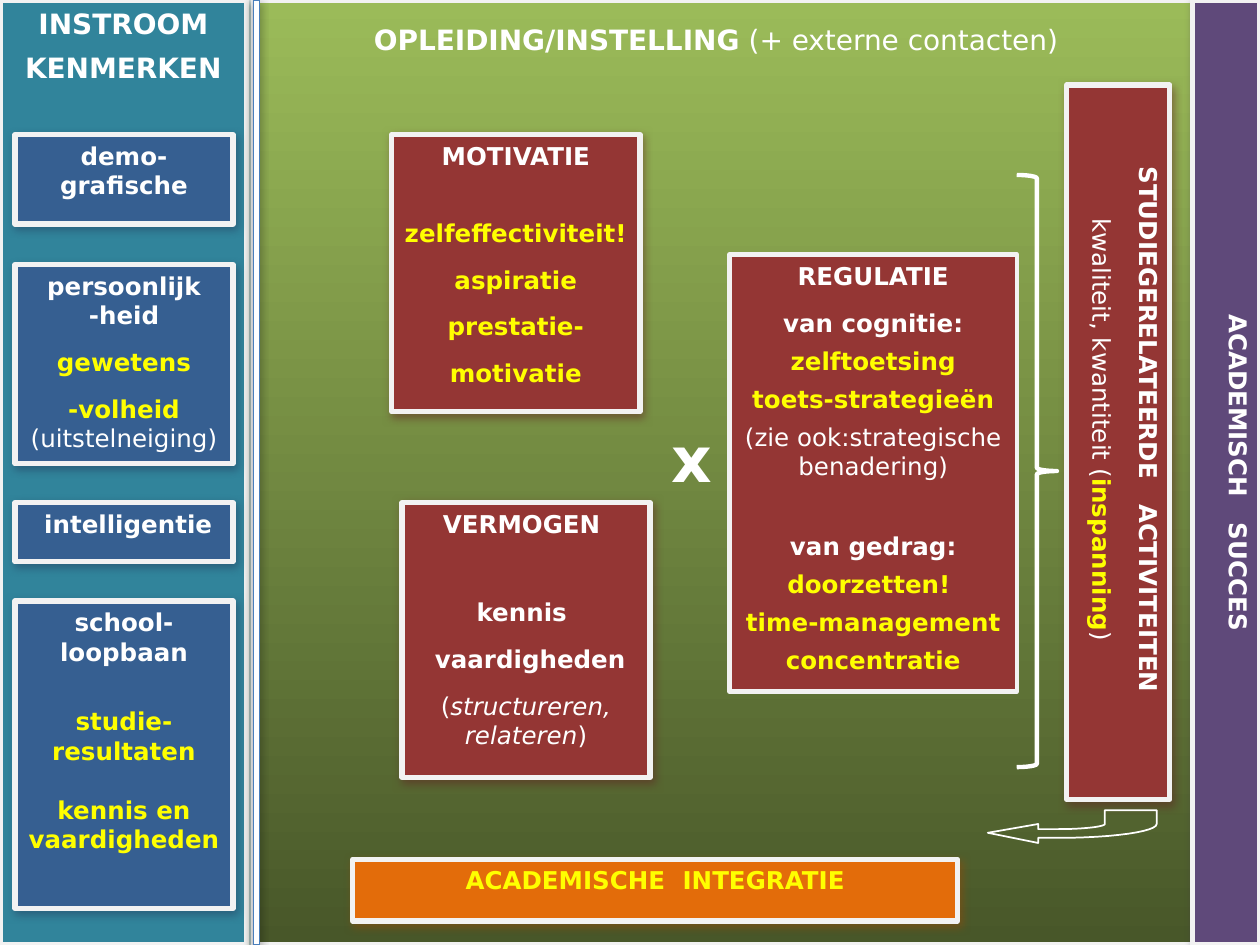
from collections import namedtuple

from lxml.etree import SubElement
from pptx import Presentation
from pptx.dml.color import RGBColor
from pptx.enum.shapes import MSO_SHAPE as Shape
from pptx.enum.text import MSO_ANCHOR as Anchor, PP_ALIGN as Align
from pptx.oxml.ns import qn
from pptx.util import Pt

FONT = "DejaVu Sans"
WHITE, YELLOW, FRAME = "FFFFFF", "FFFF00", "F2F2F2"
BLUE, RED = ("365F91", "243F60"), ("943634", "622423")

Run = namedtuple("Run", "text color bold italic spacing", defaults=(WHITE, True, False, 0))
Para = namedtuple("Para", "runs before right", defaults=(0, 0))


def rgb(hex_color):
    return RGBColor.from_string(hex_color)


def white(text, before=0):
    return Para([Run(text)], before)


def yellow(text, before=0):
    return Para([Run(text, YELLOW)], before)


def light(text, before=0):
    return Para([Run(text, bold=False)], before)


def spread(first, second, spacing, color=WHITE, right=0):
    """Two words with a widened space between them."""
    return Para([Run(first, color), Run(" ", color, spacing=spacing), Run(second, color)], 0, right)


def add_shadow(shape, color, alpha=50, distance=2.2, angle=63):
    effects = shape._element.spPr.find(qn("a:effectLst"))
    shadow = SubElement(effects, qn("a:outerShdw"), blurRad=str(Pt(5)), dist=str(Pt(distance)),
                        dir=str(angle * 60000), algn="ctr", rotWithShape="0")
    tint = SubElement(shadow, qn("a:srgbClr"), val=color)
    SubElement(tint, qn("a:alpha"), val=str(alpha * 1000))


def write(shape, paras, size=14, align=Align.CENTER):
    frame = shape.text_frame
    frame.word_wrap = True
    frame.vertical_anchor = Anchor.TOP
    for number, para in enumerate(paras):
        paragraph = frame.add_paragraph() if number else frame.paragraphs[0]
        paragraph.alignment = align
        paragraph.space_before = Pt(para.before)
        if para.right:
            paragraph._p.get_or_add_pPr().set("marR", str(Pt(para.right)))
        for part in para.runs:
            run = paragraph.add_run()
            run.text = part.text
            font = run.font
            font.name, font.size = FONT, Pt(size)
            font.bold, font.italic = part.bold, part.italic
            font.color.rgb = rgb(part.color)
            if part.spacing:
                run._r.get_or_add_rPr().set("spc", str(round(part.spacing * 100)))


def outline(shape, color, width):
    shape.shadow.inherit = False
    shape.line.color.rgb = rgb(color)
    shape.line.width = Pt(width)


def add_panel(slide, at, fill=None, shadow=None, paras=(), size=14, line=3, rotation=0):
    panel = slide.shapes.add_shape(Shape.RECTANGLE, *map(Pt, at))
    panel.rotation = rotation
    outline(panel, FRAME, line)
    if fill:
        panel.fill.solid()
        panel.fill.fore_color.rgb = rgb(fill)
    if shadow:
        add_shadow(panel, shadow)
    write(panel, paras, size)
    return panel


def add_label(slide, at, paras, size, align):
    write(slide.shapes.add_textbox(*map(Pt, at)), paras, size, align)


def add_programme(slide):
    programme = add_panel(slide, (144.7, 0, 538.6, 540), shadow="4E6128")
    programme.fill.gradient()
    programme.fill.gradient_angle = 270
    for stop, color, position in zip(programme.fill.gradient_stops, ("9BBB59", "485729"), (0, 1)):
        stop.color.rgb = rgb(color)
        stop.position = position


def add_brace(slide):
    brace = slide.shapes.add_shape(Shape.RIGHT_BRACE, Pt(581), Pt(100), Pt(23), Pt(338.4))
    brace.adjustments[0] = 0.083
    brace.fill.background()
    outline(brace, WHITE, 2.5)


def curve(p0, p1, p2, p3, steps=12):
    """Points along a cubic Bezier curve, without its start."""
    for step in range(1, steps + 1):
        t = step / steps
        u = 1 - t
        yield tuple(u**3 * a + 3 * u * u * t * b + 3 * u * t * t * c + t**3 * d
                    for a, b, c, d in zip(p0, p1, p2, p3))


def add_return_arrow(slide):
    points = [(593.3, 481.7), (593.3, 478.8), (604.8, 478.8),
              *curve((604.8, 478.8), (635.8, 478.8), (661, 475.2), (661, 470.9)),
              (661, 463), (631.4, 463), (631.4, 470.9),
              *curve((631.4, 470.9), (631.4, 472.3), (619.9, 473.8), (604.8, 473.8)),
              (593.3, 473.8), (593.3, 470.9)]
    builder = slide.shapes.build_freeform(Pt(564.5), Pt(475.9))
    builder.add_line_segments([(Pt(x), Pt(y)) for x, y in points], close=True)
    arrow = builder.convert_to_shape()
    arrow.fill.background()
    outline(arrow, WHITE, 1)


def add_intake_boxes(slide):
    boxes = [
        (77, 51, [white("demo-"), white("grafische")]),
        (151.2, 113.8, [white("persoonlijk"), white("-heid"), yellow("gewetens", 10),
                        yellow("-volheid", 10), light("(uitstelneiging)")]),
        (287.3, 33.8, [white(" intelligentie")]),
        (343.4, 175.7, [white("school-"), white("loopbaan"), yellow("studie-", 23),
                        yellow("resultaten"), yellow("kennis en vaardigheden", 17)]),
    ]
    for top, height, paras in boxes:
        add_panel(slide, (8.6, top, 124.6, height), *BLUE, paras)


def add_factor_boxes(slide):
    add_panel(slide, (223.9, 77, 141.8, 158.4), *RED, [
        white("MOTIVATIE"), yellow("zelfeffectiviteit!", 27), yellow("aspiratie", 10),
        yellow("prestatie-", 10), yellow("motivatie", 10)])
    add_panel(slide, (229.7, 287.3, 141.8, 157), *RED, [
        white("VERMOGEN "), white("kennis ", 33.5), white(" vaardigheden", 10),
        Para([Run("(", bold=False), Run("structureren, relateren", bold=False, italic=True),
              Run(")", bold=False)], 10)])
    add_panel(slide, (416.9, 145.4, 164.2, 249.8), RED[0], line=2.5, paras=[
        white("REGULATIE"), white("van cognitie:", 10), yellow("zelftoetsing", 5),
        yellow("toets-strategieën", 5), light("(zie ook:strategische benadering)", 5),
        white("van gedrag:", 28.5), yellow("doorzetten! ", 5), yellow("time-management", 5),
        yellow("concentratie", 5)])


def main():
    prs = Presentation()
    prs.slide_width, prs.slide_height = Pt(720), Pt(540)
    slide = prs.slides.add_slide(prs.slide_layouts[6])

    add_panel(slide, (0, 0, 141, 540), "31849B", "205867",
              [white("INSTROOM"), white("KENMERKEN", 6)], size=16)
    add_programme(slide)
    add_panel(slide, (430.6, 250.9, 540, 38.2), "5F497A", "3F3151",
              [spread("ACADEMISCH", "SUCCES", 9.75)], rotation=90)
    add_intake_boxes(slide)
    add_factor_boxes(slide)
    add_brace(slide)
    add_panel(slide, (434.9, 223.2, 408.2, 59), *RED, [
        spread("STUDIEGERELATEERDE", "ACTIVITEITEN", 9.75, right=14.6),
        Para([Run("kwaliteit, kwantiteit (", bold=False), Run("inspanning", YELLOW),
              Run(")", bold=False)], 10)], rotation=90)
    add_label(slide, (206.6, 9.4, 459.4, 27.4),
              [Para([Run("OPLEIDING/INSTELLING"), Run(" (+ externe contacten)", bold=False)])],
              16, Align.LEFT)
    add_label(slide, (371.5, 236.2, 48.2, 62.6), [white("x")], 36, Align.CENTER)
    add_panel(slide, (201.6, 491, 345.6, 35.3), "E36C0A", "974706",
              [spread("ACADEMISCHE", "INTEGRATIE", 4.9, YELLOW)])
    add_return_arrow(slide)
    divider = add_panel(slide, (144.7, 0, 3.6, 540), WHITE)
    outline(divider, "4A7EBB", 0.75)
    add_shadow(divider, "000000", alpha=35, distance=1.8, angle=90)

    prs.save("out.pptx")


if __name__ == "__main__":
    main()
